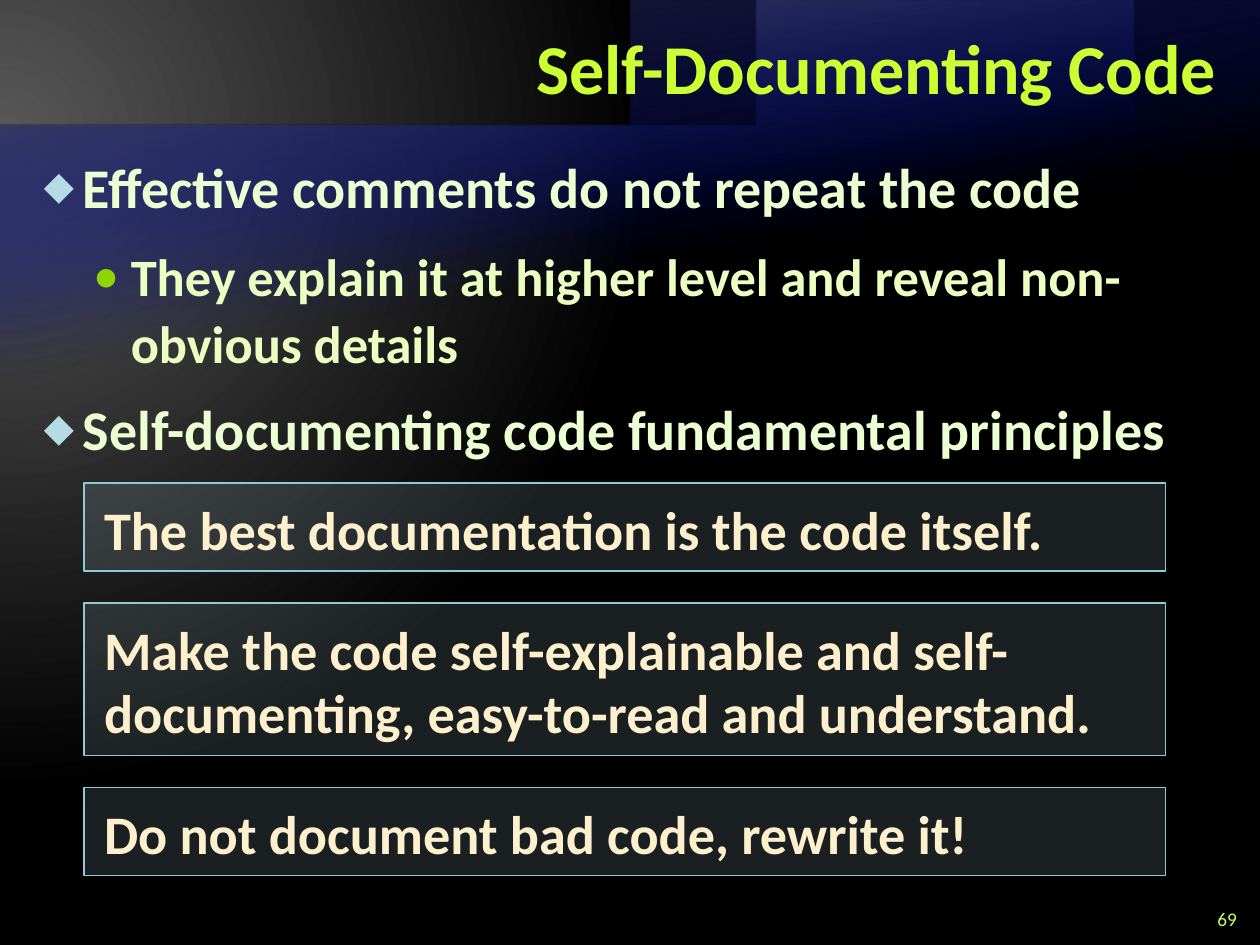
"""Build the Self-Documenting Code slide on a grid of 120 columns and 90 rows."""
import pptx
import pptx.dml.color
import pptx.enum.shapes
import pptx.enum.text
import pptx.oxml
import pptx.oxml.ns
import pptx.util

COLORS = {"title": "CCFF33", "topic": "EBFFD2", "detail": "EBFFC2", "diamond": "B5DBE5", "dot": "8FD600",
          "number": "CCFF66", "box": "B5DBE5", "border": "90CAD7", "principle": "FFF0CD",
          "glow": "595959", "night": "000000", "wave": "000D9E", "shade": "262626"}
ALIGN = pptx.enum.text.PP_ALIGN
ANCHOR = pptx.enum.text.MSO_ANCHOR
RECT = pptx.enum.shapes.MSO_SHAPE.RECTANGLE
NS = pptx.oxml.ns.nsdecls("a")
Pt = pptx.util.Pt

prs = pptx.Presentation()
prs.slide_width, prs.slide_height = pptx.util.Inches(10), pptx.util.Inches(7.5)
s = prs.slides.add_slide(prs.slide_layouts[6])
col, row = prs.slide_width / 120, prs.slide_height / 90


def set_gradient(fill, element, stops, direction):
    """Give a fill its gradient stops (position, colour, opacity) and direction."""
    fill.gradient()
    old = next(element.iter(pptx.oxml.ns.qn("a:gradFill")))
    gs = "".join(f'<a:gs pos="{pos * 1000}"><a:srgbClr val="{COLORS[name]}">'
                 f'<a:alpha val="{alpha * 1000}"/></a:srgbClr></a:gs>' for pos, name, alpha in stops)
    xml = f'<a:gradFill {NS} rotWithShape="1"><a:gsLst>{gs}</a:gsLst>{direction}</a:gradFill>'
    old.getparent().replace(old, pptx.oxml.parse_xml(xml))


def write(tf, p, text, size, color, bold=True, **fmt):
    """Write one run into a paragraph and apply its paragraph format."""
    tf.word_wrap = True
    for name, value in fmt.items():
        setattr(p, name, value)
    r = p.add_run()
    r.text = text
    for name, value in {"name": "Calibri", "size": Pt(size), "bold": bold}.items():
        setattr(r.font, name, value)
    r.font.color.rgb = pptx.dml.color.RGBColor.from_string(COLORS[color])


set_gradient(s.background.fill, s.element, [(0, "glow", 100), (83, "night", 100)],
             '<a:path path="circle"><a:fillToRect l="20000" t="30000" r="135000" b="100000"/></a:path>')

waves = [(6.53, [(0, 1.33), (5, 1.33), (5.34, -0.75), (10, 0.45)], "shade"),
         (5.57, [(0, 1.33), (5, 1.33), (5.98, -0.49), (10, 0.67)], "glow")]
for bottom, curve, crest in waves:
    points = []
    for t in [i / 60 for i in range(61)]:
        weights = [(1 - t) ** 3, 3 * t * (1 - t) ** 2, 3 * t ** 2 * (1 - t), t ** 3]
        points.append([sum(w * c[axis] for w, c in zip(weights, curve)) for axis in (0, 1)])
    fb = s.shapes.build_freeform(10, bottom, scale=pptx.util.Inches(1))
    fb.add_line_segments([(0, bottom)] + points, close=True)
    sp = fb.convert_to_shape()
    sp.shadow.inherit = False
    sp.line.fill.background()
    set_gradient(sp.fill, sp.element, [(65, "wave", 0), (100, crest, 100)], '<a:lin ang="15600000" scaled="0"/>')

labels = [((24, 1, 93, 12), "Self-Documenting Code", 40, "title", True, {"line_spacing": Pt(40)}),
          ((113, 86, 6, 3), "69", 11, "number", False, {})]
for (x, y, w, h), text, size, color, bold, fmt in labels:
    tf = s.shapes.add_textbox(int(x * col), int(y * row), int(w * col), int(h * row)).text_frame
    tf.vertical_anchor = ANCHOR.MIDDLE
    write(tf, tf.paragraphs[0], text, size, color, bold, alignment=ALIGN.RIGHT, **fmt)

levels = [(0.31, 0.31, "diamond", 70, "◆", 32, "topic"),
          (0.69, 0.30, "dot", 100, "•", 30, "detail")]
points = [(0, "Effective comments do not repeat the code"),
          (1, "They explain it at higher level and reveal non-obvious details"),
          (0, "Self-documenting code fundamental principles")]
tf = s.shapes.add_textbox(int(3 * col), int(14 * row), int(114 * col), int(74 * row)).text_frame
for i, (level, text) in enumerate(points):
    margin, hang, bullet_color, bullet_size, bullet, size, color = levels[level]
    p = tf.add_paragraph() if i else tf.paragraphs[0]
    pPr = p._p.get_or_add_pPr()
    pPr.set("marL", str(pptx.util.Inches(margin)))
    pPr.set("indent", str(-pptx.util.Inches(hang)))
    for xml in (f'<a:buClr {NS}><a:srgbClr val="{COLORS[bullet_color]}"/></a:buClr>',
                f'<a:buSzPct {NS} val="{bullet_size * 1000}"/>',
                f'<a:buFont {NS} typeface="Calibri"/>',
                f'<a:buChar {NS} char="{bullet}"/>'):
        pPr.append(pptx.oxml.parse_xml(xml))
    write(tf, p, text, size, color, level=level, line_spacing=Pt(38),
          space_before=Pt(6 if i else 0), space_after=Pt(6))

principles = [("The best documentation is the code itself.", 8.4),
              ("Make the code self-explainable and self-documenting, easy-to-read and understand.", 14.5),
              ("Do not document bad code, rewrite it!", 8.4)]
top, gap = 46, 3.05
frame = {"margin_left": 0.16, "margin_top": 0.12, "margin_right": 0.16, "margin_bottom": 0.08}
for text, height in principles:
    sp = s.shapes.add_shape(RECT, int(8 * col), int(top * row), int(103 * col), int(height * row))
    sp.shadow.inherit = False
    sp.fill.solid()
    sp.fill.fore_color.rgb = pptx.dml.color.RGBColor.from_string(COLORS["box"])
    tint = next(sp.element.spPr.iter(pptx.oxml.ns.qn("a:srgbClr")))
    tint.append(pptx.oxml.parse_xml(f'<a:alpha {NS} val="15000"/>'))
    sp.line.color.rgb = pptx.dml.color.RGBColor.from_string(COLORS["border"])
    sp.line.width = Pt(1)
    tf = sp.text_frame
    for name, value in frame.items():
        setattr(tf, name, pptx.util.Inches(value))
    tf.vertical_anchor = ANCHOR.TOP
    tf.auto_size = pptx.enum.text.MSO_AUTO_SIZE.SHAPE_TO_FIT_TEXT
    write(tf, tf.paragraphs[0], text, 31, "principle", alignment=ALIGN.LEFT, line_spacing=Pt(36))
    top += height + gap

prs.save("out.pptx")
